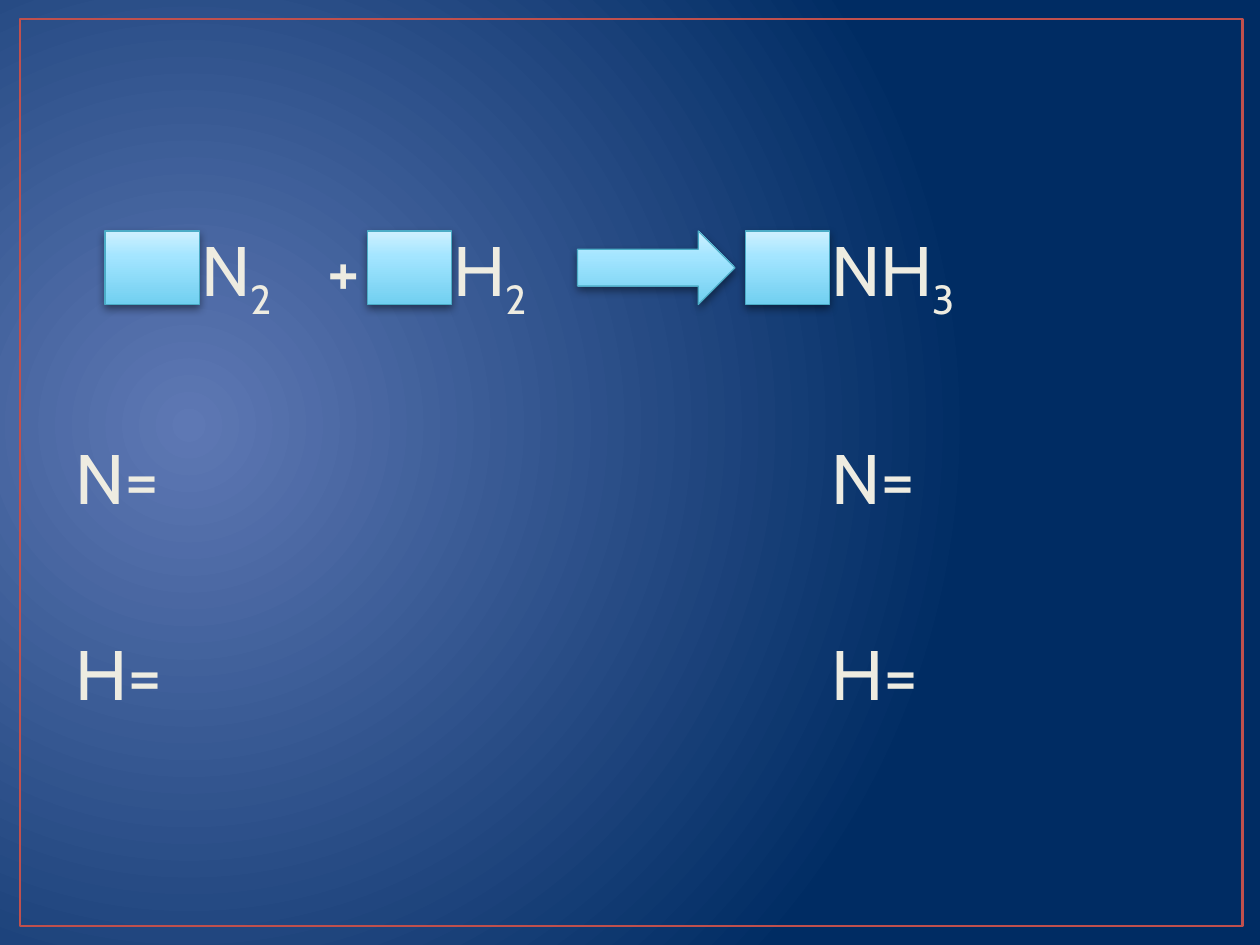
from lxml.etree import SubElement
from pptx import Presentation
from pptx.dml.color import RGBColor
from pptx.enum.shapes import MSO_SHAPE
from pptx.enum.text import MSO_ANCHOR, MSO_AUTO_SIZE
from pptx.oxml import parse_xml
from pptx.oxml.ns import nsdecls, qn
from pptx.util import Pt

GLASS_STOPS = [(0, "71CFF0"), (65, "A3E5FF"), (100, "CFF1FF")]
BACKDROP_STOPS = [(0, "5E78B4"), (100, "002C63")]
CIRCLE = ('<a:path path="circle"><a:fillToRect l="15000" t="50000" '
          'r="85000" b="60000"/></a:path>')
UPWARD = '<a:lin ang="16200000" scaled="0"/>'
SOFT_SHADOW = {"blurRad": Pt(5), "dist": Pt(2), "dir": 5400000, "rotWithShape": 0}
COLUMN = 72


def color(hex_value):
    """Turn a hex string into a colour."""
    return RGBColor.from_string(hex_value)


def set_gradient(parent, stops, direction):
    """Replace the solid fill of a properties element with a gradient."""
    stop_xml = "".join(
        f'<a:gs pos="{position * 1000}"><a:srgbClr val="{hex_value}"/></a:gs>'
        for position, hex_value in stops)
    gradient = parse_xml(f'<a:gradFill {nsdecls("a")} rotWithShape="1">'
                         f'<a:gsLst>{stop_xml}</a:gsLst>{direction}</a:gradFill>')
    parent.replace(parent.find(qn("a:solidFill")), gradient)


def add_backdrop(slide, box):
    """Paint the radial background and the thin red frame."""
    slide.background.fill.solid()
    set_gradient(slide.element.find(".//" + qn("p:bgPr")), BACKDROP_STOPS, CIRCLE)
    frame = slide.shapes.add_shape(MSO_SHAPE.RECTANGLE, *map(Pt, box))
    frame.shadow.inherit = False
    frame.fill.background()
    frame.line.color.rgb = color("C0504D")
    frame.line.width = Pt(1.5)


def add_row(paragraph, text, tab_width, space_before):
    """Write one tabbed row, with its digits as subscripts."""
    paragraph.space_before = Pt(space_before)
    paragraph.line_spacing = 1.0
    properties = paragraph._p.get_or_add_pPr()
    for name, value in {"marL": 0, "indent": 0, "defTabSz": Pt(tab_width)}.items():
        properties.set(name, str(value))
    SubElement(properties, qn("a:buNone"))
    for part in text.split("|"):
        run = paragraph.add_run()
        run.text = part
        for name, value in {"name": "Cabin", "size": Pt(40)}.items():
            setattr(run.font, name, value)
        run.font.color.rgb = color("EEECE1")
        if part.isdigit():
            run.font._element.set("baseline", "-25000")


def add_equation(body, box):
    """Fill the body with the equation and the atom counts."""
    for name, value in zip(("left", "top", "width", "height"), box):
        setattr(body, name, Pt(value))
    frame = body.text_frame
    settings = {"word_wrap": True, "auto_size": MSO_AUTO_SIZE.NONE,
                "vertical_anchor": MSO_ANCHOR.TOP}
    for name, value in settings.items():
        setattr(frame, name, value)
    add_row(frame.paragraphs[0], "\tN|2|\t+\tH|2|\t\t\tNH|3", COLUMN, 8)
    for atom in "NH":
        add_row(frame.add_paragraph(), f"{atom}=\t{atom}=", 6 * COLUMN, 64)


def add_glass(slide, kind, box):
    """Add one glossy blue shape with a soft shadow."""
    glass = slide.shapes.add_shape(kind, *map(Pt, box))
    glass.fill.solid()
    set_gradient(glass._element.spPr, GLASS_STOPS, UPWARD)
    glass.line.color.rgb = color("4BACC6")
    glass.line.width = Pt(0.75)
    glass.shadow.inherit = False
    effects = glass._element.spPr.find(qn("a:effectLst"))
    shadow = SubElement(effects, qn("a:outerShdw"))
    for name, value in SOFT_SHADOW.items():
        shadow.set(name, str(value))
    black = SubElement(shadow, qn("a:srgbClr"), val="000000")
    SubElement(black, qn("a:alpha"), val="43000")


def add_reaction_shapes(slide, top, height):
    """Add the reaction arrow and the coefficient boxes in one row."""
    add_glass(slide, MSO_SHAPE.RIGHT_ARROW, (330, top, 90, height))
    for left, width in ((426, 48), (210, 48), (60, 54)):
        add_glass(slide, MSO_SHAPE.RECTANGLE, (left, top, width, height))


def main():
    """Build and save the slide."""
    deck = Presentation()
    deck.slide_width, deck.slide_height = Pt(720), Pt(540)
    slide = deck.slides.add_slide(deck.slide_layouts.get_by_name("Title and Content"))
    title = slide.shapes.title.element
    title.getparent().remove(title)
    add_backdrop(slide, (11.5, 10.8, 698.4, 518.4))
    add_equation(slide.placeholders[1], (36, 126, 648, 356.4))
    add_reaction_shapes(slide, 132, 42)
    deck.save("out.pptx")


if __name__ == "__main__":
    main()
